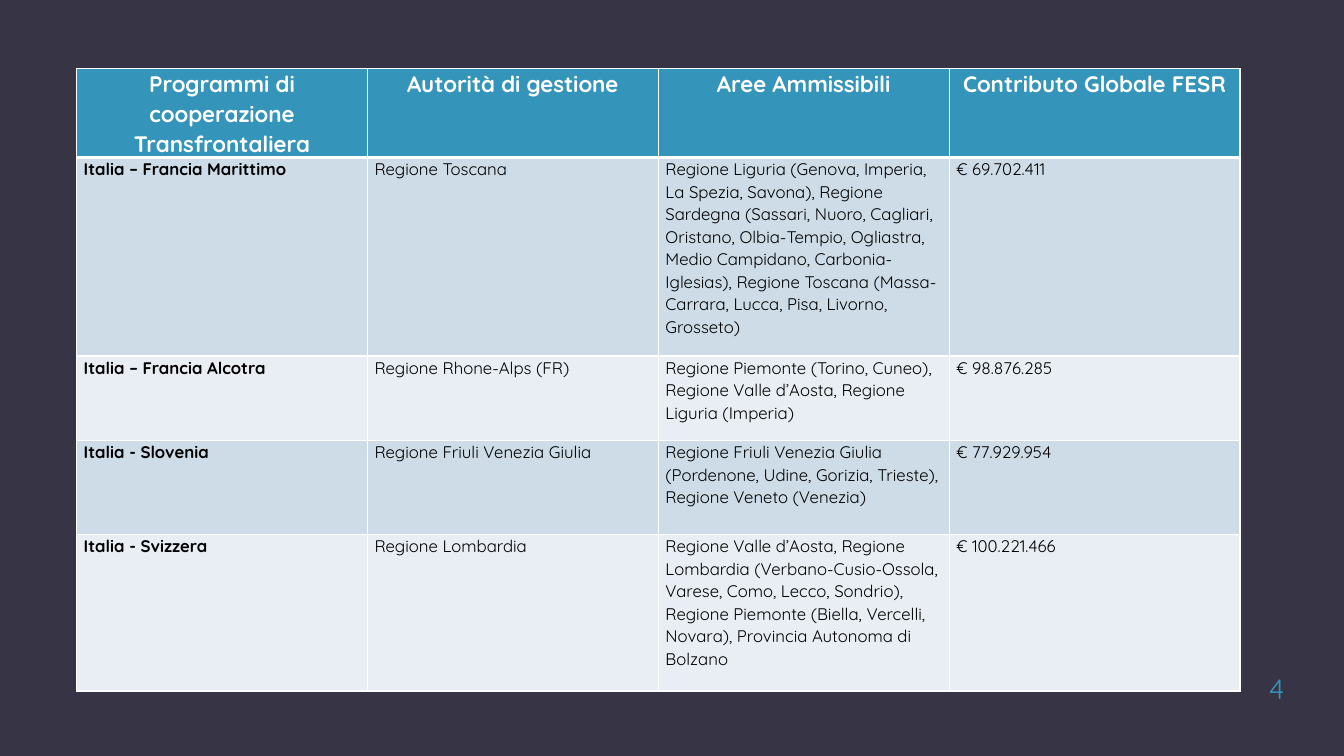
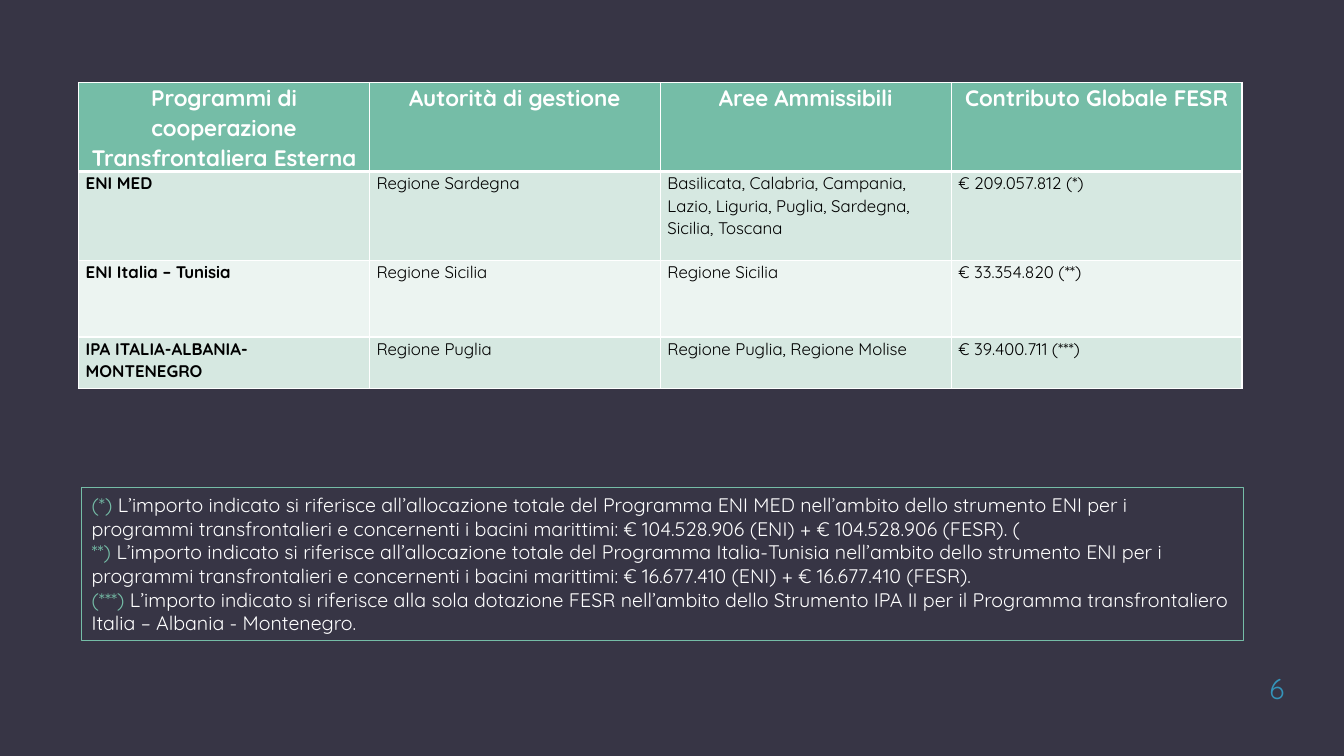
from dataclasses import dataclass

from lxml import etree
from pptx import Presentation
from pptx.dml.color import RGBColor
from pptx.enum.shapes import MSO_SHAPE
from pptx.enum.text import MSO_ANCHOR, PP_ALIGN
from pptx.oxml.ns import qn
from pptx.util import Cm, Pt

RECT = MSO_SHAPE.RECTANGLE
LEFT, CENTER, RIGHT = PP_ALIGN.LEFT, PP_ALIGN.CENTER, PP_ALIGN.RIGHT
MIDDLE, BOTTOM = MSO_ANCHOR.MIDDLE, MSO_ANCHOR.BOTTOM
BLANK = 6


@dataclass(frozen=True)
class Palette:
    header: str
    odd: str
    even: str


@dataclass(frozen=True)
class Theme:
    font: str = "Quicksand"
    background: str = "373545"
    white: str = "FFFFFF"
    black: str = "000000"
    blue: Palette = Palette("3494BA", "CEDCE7", "E8EEF3")
    green: Palette = Palette("75BDA7", "D6E8E1", "ECF4F1")
    header_size: int = 16
    body_size: int = 12
    note_size: int = 14
    number_size: int = 20
    line_spacing: float = 1.07
    thin: int = 1
    thick: int = 3


THEME = Theme()

# Boxes are left, top, width, height in centimetres
NUMBER_BOX = (29.67, 16.43, 2.95, 1.37)
NOTES_BOX = (2.06, 12.29, 29.29, 3.84)
TABLE_WIDTH = 29.32
HEADER_HEIGHT = 2.24

SHARED_HEADERS = ["Autorità di gestione", "Aree Ammissibili", "Contributo Globale FESR"]

INTERNAL_HEADER = "Programmi di cooperazione Transfrontaliera"
INTERNAL_ROWS = [
    ("Italia – Francia Marittimo", "Regione Toscana",
     "Regione Liguria (Genova, Imperia, La Spezia, Savona), Regione Sardegna "
     "(Sassari, Nuoro, Cagliari, Oristano, Olbia-Tempio, Ogliastra, Medio Campidano, "
     "Carbonia-Iglesias), Regione Toscana (Massa-Carrara, Lucca, Pisa, Livorno, Grosseto)",
     "€ 69.702.411"),
    ("Italia – Francia Alcotra", "Regione Rhone-Alps (FR)",
     "Regione Piemonte (Torino, Cuneo), Regione Valle d’Aosta, Regione Liguria (Imperia)",
     "€ 98.876.285"),
    ("Italia - Slovenia", "Regione Friuli Venezia Giulia",
     "Regione Friuli Venezia Giulia (Pordenone, Udine, Gorizia, Trieste), "
     "Regione Veneto (Venezia)",
     "€ 77.929.954"),
    ("Italia - Svizzera", "Regione Lombardia",
     "Regione Valle d’Aosta, Regione Lombardia (Verbano-Cusio-Ossola, Varese, Como, "
     "Lecco, Sondrio), Regione Piemonte (Biella, Vercelli, Novara), "
     "Provincia Autonoma di Bolzano",
     "€ 100.221.466"),
]

EXTERNAL_HEADER = "Programmi di cooperazione Transfrontaliera Esterna"
EXTERNAL_ROWS = [
    ("ENI MED", "Regione Sardegna",
     "Basilicata, Calabria, Campania, Lazio, Liguria, Puglia, Sardegna, Sicilia, Toscana",
     "€ 209.057.812 (*)"),
    ("ENI Italia – Tunisia", "Regione Sicilia", "Regione Sicilia", "€ 33.354.820 (**)"),
    ("IPA ITALIA-ALBANIA-MONTENEGRO", "Regione Puglia",
     "Regione Puglia, Regione Molise", "€ 39.400.711 (***)"),
]

NOTES = [
    ("(*)",
     " L’importo indicato si riferisce all’allocazione totale del Programma ENI MED "
     "nell’ambito dello strumento ENI per i programmi transfrontalieri e concernenti "
     "i bacini marittimi: € 104.528.906 (ENI) + € 104.528.906 (FESR). ("),
    ("**) ",
     "L’importo indicato si riferisce all’allocazione totale del Programma Italia-Tunisia "
     "nell’ambito dello strumento ENI per i programmi transfrontalieri e concernenti "
     "i bacini marittimi: € 16.677.410 (ENI) + € 16.677.410 (FESR)."),
    ("(***) ",
     "L’importo indicato si riferisce alla sola dotazione FESR nell’ambito dello Strumento "
     "IPA II per il Programma transfrontaliero Italia – Albania - Montenegro."),
]


def rgb(color):
    return RGBColor.from_string(color)


def add_run(p, text, size, color, bold=False):
    r = p.add_run()
    r.text = text
    r.font.name = THEME.font
    r.font.size = Pt(size)
    r.font.bold = bold
    r.font.color.rgb = rgb(color)


def set_borders(cell, top, bottom):
    """Draw white cell borders; they must come before the fill in the XML."""
    tc_pr = cell._tc.get_or_add_tcPr()
    widths = {"a:lnL": THEME.thin, "a:lnR": THEME.thin, "a:lnT": top, "a:lnB": bottom}
    for tag, width in widths.items():
        ln = etree.SubElement(tc_pr, qn(tag), w=str(Pt(width)))
        fill = etree.SubElement(ln, qn("a:solidFill"))
        etree.SubElement(fill, qn("a:srgbClr"), val=THEME.white)


def fill_cell(cell, text, row, col, palette):
    is_header = row == 0
    set_borders(cell,
                top=THEME.thick if row == 1 else THEME.thin,
                bottom=THEME.thick if is_header else THEME.thin)
    cell.fill.solid()
    band = palette.odd if row % 2 else palette.even
    cell.fill.fore_color.rgb = rgb(palette.header if is_header else band)
    cell.margin_left = cell.margin_right = Cm(0.18)
    cell.margin_top = cell.margin_bottom = 0
    p = cell.text_frame.paragraphs[0]
    p.alignment = CENTER if is_header else LEFT
    p.line_spacing = THEME.line_spacing
    add_run(p, text,
            THEME.header_size if is_header else THEME.body_size,
            THEME.white if is_header else THEME.black,
            bold=is_header or col == 0)


def add_programme_table(s, left, top, first_header, rows, row_heights, palette):
    heights = [HEADER_HEIGHT, *row_heights]
    grid = [(first_header, *SHARED_HEADERS), *rows]
    columns = len(grid[0])
    table = s.shapes.add_table(len(grid), columns, Cm(left), Cm(top),
                               Cm(TABLE_WIDTH), Cm(sum(heights))).table
    for column in table.columns:
        column.width = Cm(TABLE_WIDTH / columns)
    for i, (texts, height) in enumerate(zip(grid, heights)):
        table.rows[i].height = Cm(height)
        for j, text in enumerate(texts):
            fill_cell(table.cell(i, j), text, i, j, palette)


def add_notes(s, box, notes, color):
    sp = s.shapes.add_shape(RECT, *map(Cm, box))
    sp.shadow.inherit = False
    sp.fill.background()
    sp.line.color.rgb = rgb(color)
    sp.line.width = Pt(0.75)
    tf = sp.text_frame
    tf.word_wrap = True
    tf.vertical_anchor = MIDDLE
    for i, (mark, text) in enumerate(notes):
        p = tf.add_paragraph() if i else tf.paragraphs[0]
        p.alignment = LEFT
        add_run(p, mark, THEME.note_size, color)
        add_run(p, text, THEME.note_size, THEME.white)


def add_slide_number(s, box, number):
    tf = s.shapes.add_textbox(*map(Cm, box)).text_frame
    tf.word_wrap = True
    tf.vertical_anchor = BOTTOM
    tf.margin_bottom = Cm(0.03)
    p = tf.paragraphs[0]
    p.alignment = RIGHT
    add_run(p, str(number), THEME.number_size, THEME.blue.header)


def new_slide(prs, number):
    s = prs.slides.add_slide(prs.slide_layouts[BLANK])
    add_slide_number(s, NUMBER_BOX, number)
    return s


def main():
    prs = Presentation()
    prs.slide_width, prs.slide_height = Cm(33.87), Cm(19.05)
    background = prs.slide_master.background.fill
    background.solid()
    background.fore_color.rgb = rgb(THEME.background)

    # Cross-border programmes
    s = new_slide(prs, 4)
    add_programme_table(s, 1.93, 1.73, INTERNAL_HEADER, INTERNAL_ROWS,
                        [5, 2.13, 2.37, 3.94], THEME.blue)

    # External cross-border programmes with notes
    s = new_slide(prs, 6)
    add_programme_table(s, 1.98, 2.08, EXTERNAL_HEADER, EXTERNAL_ROWS,
                        [2.24, 1.93, 1.3], THEME.green)
    add_notes(s, NOTES_BOX, NOTES, THEME.green.header)

    prs.save("out.pptx")


if __name__ == "__main__":
    main()
